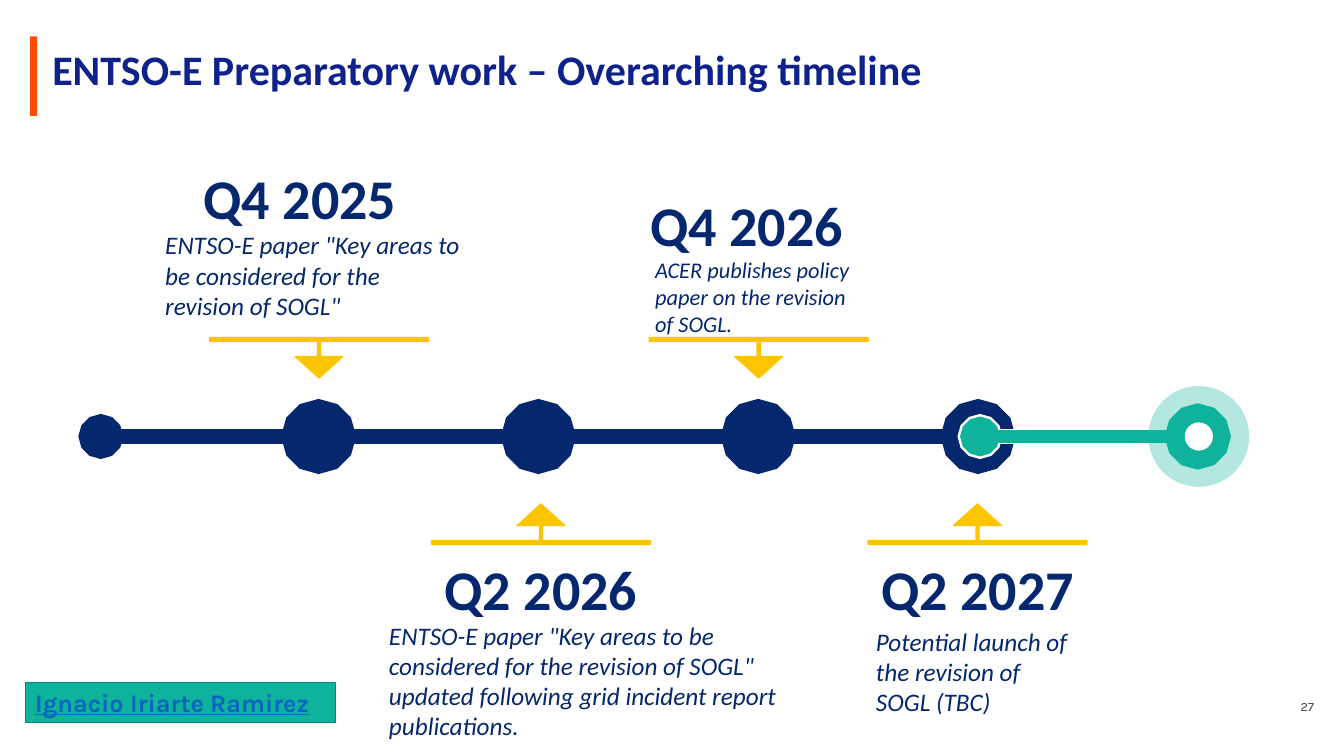
from dataclasses import dataclass

from lxml import etree
from pptx import Presentation
from pptx.dml.color import RGBColor
from pptx.enum.shapes import MSO_CONNECTOR, MSO_SHAPE
from pptx.enum.text import MSO_ANCHOR, PP_ALIGN
from pptx.oxml.ns import qn
from pptx.shapes.autoshape import Shape
from pptx.slide import Slide
from pptx.util import Inches, Pt

STRAIGHT = MSO_CONNECTOR.STRAIGHT
RECTANGLE, OVAL = MSO_SHAPE.RECTANGLE, MSO_SHAPE.OVAL
CALLOUT = MSO_SHAPE.DOWN_ARROW_CALLOUT
TOP, MIDDLE = MSO_ANCHOR.TOP, MSO_ANCHOR.MIDDLE
LEFT, CENTER, RIGHT = PP_ALIGN.LEFT, PP_ALIGN.CENTER, PP_ALIGN.RIGHT

Box = tuple[float, float, float, float]


@dataclass(frozen=True)
class Theme:
    """Colours, fonts and type sizes of the slide."""

    navy: str = "04276E"
    title_blue: str = "0F218B"
    orange: str = "FF4D00"
    teal: str = "0FB29A"
    dark_teal: str = "0B8472"
    yellow: str = "FDC400"
    white: str = "FFFFFF"
    grey: str = "404040"
    link_blue: str = "0563C1"
    body_font: str = "Calibri"
    label_font: str = "Karla"
    title_size: float = 30
    date_size: float = 40
    body_size: float = 18
    compact_size: float = 16
    number_size: float = 9


@dataclass(frozen=True)
class Milestone:
    """A dated event with its pointer and description."""

    date: str
    date_at: tuple[float, float]
    pointer_left: float
    above: bool
    detail: str
    detail_box: Box
    detail_size: float


THEME = Theme()
AXIS_Y, AXIS_START, AXIS_STEP, SEGMENT_LENGTH = 4.33, 1.0, 2.18, 2.16
POINTER_WIDTH, POINTER_HEIGHT = 2.17, 0.4
POINTER_ADJUSTMENTS = (0.073, 0.591, 0.533, 0.093)

MILESTONES = (
    Milestone("Q4 2025", (1.89, 1.57), 2.08, True,
              'ENTSO-E paper "Key areas to be considered for the revision of SOGL"',
              (1.54, 2.23, 3.12, 1.01), THEME.body_size),
    Milestone("Q4 2026", (6.32, 1.84), 6.44, True,
              "ACER publishes policy paper on the revision of SOGL.",
              (6.4, 2.49, 2.2, 0.91), THEME.compact_size),
    Milestone("Q2 2027", (8.61, 5.45), 8.61, False,
              "Potential launch of the revision of SOGL (TBC)",
              (8.59, 6.16, 2.2, 1.01), THEME.body_size),
    Milestone("Q2 2026", (4.28, 5.45), 4.28, False,
              'ENTSO-E paper "Key areas to be considered for the revision of SOGL" '
              "updated following grid incident report publications.",
              (3.76, 6.1, 4.1, 1.31), THEME.body_size),
)


def write(shape: Shape, text: str, *, size: float, color: str,
          font: str = THEME.body_font, bold: bool = False, italic: bool = False,
          underline: bool = False, align: PP_ALIGN = LEFT,
          anchor: MSO_ANCHOR = TOP, spacing: float | None = None) -> None:
    """Write one formatted paragraph into a shape."""
    frame = shape.text_frame
    frame.word_wrap = True
    frame.vertical_anchor = anchor
    paragraph = frame.paragraphs[0]
    paragraph.alignment = align
    if spacing is not None:
        paragraph.line_spacing = Pt(spacing)
    run = paragraph.add_run()
    run.text = text
    run.font.name = font
    run.font.size = Pt(size)
    run.font.bold = bold
    run.font.italic = italic
    run.font.underline = underline
    run.font.color.rgb = RGBColor.from_string(color)


def add_label(slide: Slide, box: Box, text: str, **text_format) -> None:
    """Add a text box holding formatted text."""
    write(slide.shapes.add_textbox(*map(Inches, box)), text, **text_format)


def add_block(slide: Slide, kind: MSO_SHAPE, box: Box, fill: str,
              outline: str | None = None, opacity: int = 100) -> Shape:
    """Add a filled preset shape with an optional outline."""
    block = slide.shapes.add_shape(kind, *map(Inches, box))
    block.shadow.inherit = False
    block.fill.solid()
    block.fill.fore_color.rgb = RGBColor.from_string(fill)
    if opacity < 100:
        color = block.fill._xPr.find(qn("a:solidFill"))[0]
        etree.SubElement(color, qn("a:alpha"), val=str(opacity * 1000))
    if outline:
        block.line.color.rgb = RGBColor.from_string(outline)
        block.line.width = Pt(1)
    else:
        block.line.fill.background()
    return block


def add_segment(slide: Slide, index: int, color: str, width: float) -> None:
    """Add one stretch of the timeline with a small and a large round end."""
    start = AXIS_START + index * AXIS_STEP
    segment = slide.shapes.add_connector(
        STRAIGHT, Inches(start), Inches(AXIS_Y),
        Inches(start + SEGMENT_LENGTH), Inches(AXIS_Y))
    segment.line.color.rgb = RGBColor.from_string(color)
    segment.line.width = Pt(width)
    outline = segment.line._get_or_add_ln()
    for end, scale in (("a:headEnd", "med"), ("a:tailEnd", "lg")):
        etree.SubElement(outline, qn(end), type="oval", w=scale, len=scale)
    etree.SubElement(segment._element.spPr, qn("a:effectLst"))


def add_disc(slide: Slide, diameter: float, color: str, opacity: int = 100) -> None:
    """Add a disc centred on the end of the timeline."""
    center = AXIS_START + 4 * AXIS_STEP + SEGMENT_LENGTH + 0.01
    box = (center - diameter / 2, AXIS_Y - diameter / 2, diameter, diameter)
    add_block(slide, OVAL, box, color, opacity=opacity)


def add_timeline(slide: Slide) -> None:
    """Add the finished stretches, the open stretch and its end point."""
    for index in range(4):
        add_segment(slide, index, THEME.navy, 10.75)
    add_segment(slide, 4, THEME.white, 10.75)
    add_disc(slide, 1, THEME.teal, opacity=31)
    add_segment(slide, 4, THEME.teal, 9.5)
    add_disc(slide, 0.28, THEME.white)


def add_milestone(slide: Slide, milestone: Milestone) -> None:
    """Add the pointer, date and description of a milestone."""
    top = 3.35 if milestone.above else 5.0
    pointer = add_block(
        slide, CALLOUT, (milestone.pointer_left, top, POINTER_WIDTH, POINTER_HEIGHT),
        THEME.yellow, THEME.yellow)
    for index, value in enumerate(POINTER_ADJUSTMENTS):
        pointer.adjustments[index] = value
    pointer.rotation = 0 if milestone.above else 180
    add_label(slide, (*milestone.date_at, POINTER_WIDTH, 0.77), milestone.date,
              size=THEME.date_size, color=THEME.navy, bold=True, align=CENTER)
    add_label(slide, milestone.detail_box, milestone.detail,
              size=milestone.detail_size, color=THEME.navy, italic=True)


def main() -> None:
    """Build the timeline slide and save it."""
    deck = Presentation()
    deck.slide_width, deck.slide_height = Inches(13.33), Inches(7.5)
    slide = deck.slides.add_slide(deck.slide_layouts[6])

    add_label(slide, (6.75, 6.82, 6.38, 0.4), "27", size=THEME.number_size,
              color=THEME.grey, font=THEME.label_font, align=RIGHT,
              anchor=MIDDLE, spacing=9)
    add_block(slide, RECTANGLE, (0.3, 0.36, 0.07, 0.79), THEME.orange)
    add_label(slide, (0.42, 0.51, 12.71, 0.39),
              "ENTSO-E Preparatory work – Overarching timeline",
              size=THEME.title_size, color=THEME.title_blue, bold=True,
              anchor=MIDDLE, spacing=32)
    add_timeline(slide)
    for milestone in MILESTONES:
        add_milestone(slide, milestone)
    presenter = add_block(slide, RECTANGLE, (0.25, 6.77, 3.08, 0.4),
                          THEME.teal, THEME.dark_teal)
    write(presenter, "Ignacio Iriarte Ramirez", size=THEME.body_size,
          color=THEME.link_blue, font=THEME.label_font, bold=True, underline=True)
    deck.save("out.pptx")


if __name__ == "__main__":
    main()
